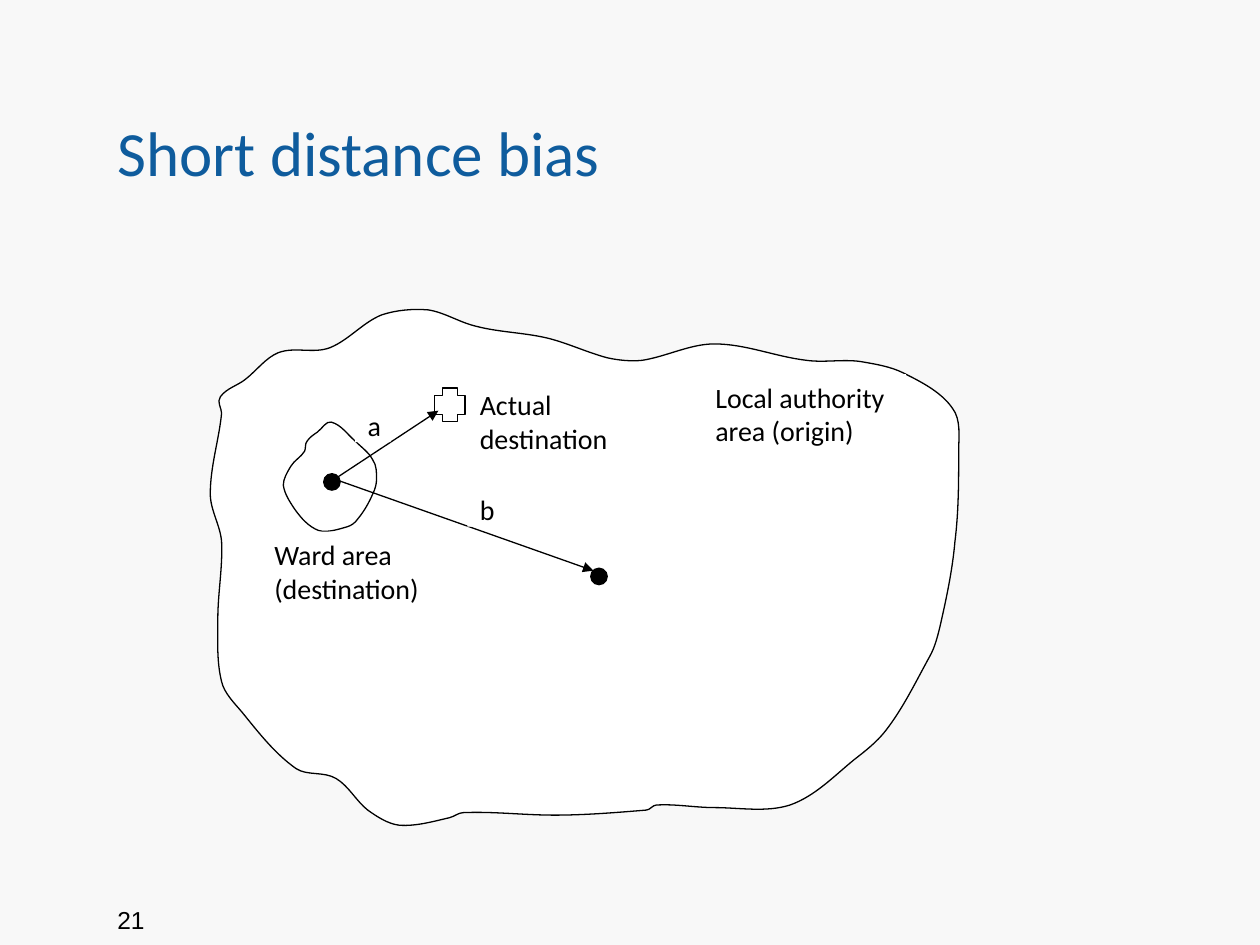
from itertools import chain
from math import dist

from lxml import etree
from pptx import Presentation
from pptx.dml.color import RGBColor
from pptx.enum.shapes import MSO_CONNECTOR, MSO_SHAPE
from pptx.enum.text import MSO_ANCHOR, PP_ALIGN
from pptx.oxml.ns import qn
from pptx.util import Pt

BACKGROUND = RGBColor(0xF8, 0xF8, 0xF8)
BLUE = RGBColor(0x0F, 0x5C, 0x9D)
BLACK = RGBColor(0, 0, 0)
WHITE = RGBColor(0xFF, 0xFF, 0xFF)

# Points the smooth outlines pass through, in hundredths of an inch.
UNIT = Pt(0.72)
AUTHORITY = [
    (19, 82), (10, 146), (19, 184), (16, 245), (19, 295), (35, 319), (78, 364),
    (110, 372), (135, 397), (160, 409), (200, 403), (211, 399), (283, 401),
    (356, 397), (364, 393), (410, 395), (470, 393), (521, 357), (546, 334),
    (581, 275), (589, 252), (601, 184), (604, 112), (599, 78), (560, 50),
    (526, 41), (483, 40), (410, 27), (353, 40), (325, 38), (280, 23), (221, 13),
    (183, 0), (146, 4), (105, 30), (64, 34), (38, 55), (18, 69),
]
WARD = [
    (18, 23), (7, 35), (1, 50), (10, 69), (29, 86), (52, 83), (60, 77), (72, 57),
    (75, 45), (72, 30), (58, 15), (39, 0), (28, 8), (20, 15),
]


def write(tf, text, size=16, font="Calibri", color=BLACK, wrap=True,
          anchor=MSO_ANCHOR.TOP):
    tf.word_wrap = wrap
    tf.vertical_anchor = anchor
    p = tf.paragraphs[0]
    p.alignment = PP_ALIGN.LEFT
    r = p.add_run()
    r.text = text
    r.font.size = Pt(size)
    r.font.name = font
    r.font.color.rgb = color


def paint(sp, fill=WHITE, outlined=True):
    sp.shadow.inherit = False
    sp.fill.solid()
    sp.fill.fore_color.rgb = fill
    if outlined:
        sp.line.color.rgb = BLACK
        sp.line.width = Pt(0.75)
    else:
        sp.line.fill.background()


def smooth_curve(points, i):
    """Return two control points and the end of the curve leaving point i."""
    before, start, end, after = (points[(i + k) % len(points)] for k in (-1, 0, 1, 2))
    reach = dist(start, end) / 3

    def control(point, a, b, sign):
        step = sign * reach / dist(a, b)
        return tuple(p + (q - o) * step for p, o, q in zip(point, a, b))

    return control(start, before, end, 1), control(end, start, after, -1), end


def add_outline(shapes, points, left, top):
    """Draw a closed smooth outline with its points measured from left, top."""
    builder = shapes.build_freeform(*points[0], scale=UNIT)
    curves = (smooth_curve(points, i) for i in range(len(points)))
    builder.add_line_segments(list(chain.from_iterable(curves)), close=True)
    sp = builder.convert_to_shape(Pt(left), Pt(top))
    lines = list(sp._element.iter(qn("a:lnTo")))
    for first, second, end in zip(lines[::3], lines[1::3], lines[2::3]):
        first.tag = qn("a:cubicBezTo")
        for line in (second, end):
            first.append(line[0])
            line.getparent().remove(line)
    paint(sp)


def add_arrow(shapes, x1, y1, x2, y2):
    c = shapes.add_connector(MSO_CONNECTOR.STRAIGHT, Pt(x1), Pt(y1), Pt(x2), Pt(y2))
    c.line.color.rgb = BLACK
    c.line.width = Pt(0.75)
    etree.SubElement(c.line._get_or_add_ln(), qn("a:tailEnd"), type="triangle")
    etree.SubElement(c._element.spPr, qn("a:effectLst"))


def add_title(s, text, left, top, width, height):
    sp = s.shapes.title
    sp.left, sp.top, sp.width, sp.height = Pt(left), Pt(top), Pt(width), Pt(height)
    write(sp.text_frame, text, size=36, color=BLUE, wrap=False,
          anchor=MSO_ANCHOR.BOTTOM)


def add_page_number(s, text, left, top, width, height):
    sp = s.shapes.add_textbox(Pt(left), Pt(top), Pt(width), Pt(height))
    write(sp.text_frame, text, size=14, font="Arial")


def add_map(s, left, top):
    shapes = s.shapes.add_group_shape().shapes

    def place(kind, x, y, width, height):
        return shapes.add_shape(kind, Pt(left + x), Pt(top + y), Pt(width), Pt(height))

    add_outline(shapes, AUTHORITY, left, top)
    add_outline(shapes, WARD, left + 48.2, top + 64.1)
    for x, y in ((224.6, 147.6), (72, 93.6)):
        paint(place(MSO_SHAPE.OVAL, x, y, 9.4, 9.4), fill=BLACK)
    cross = place(MSO_SHAPE.CROSS, 135.4, 44.6, 17.3, 19.4)
    cross.adjustments[0] = 0.25
    paint(cross)
    for x1, y1, x2, y2 in ((78.5, 96.5, 137.5, 57.6), (73.4, 95, 226.1, 149)):
        add_arrow(shapes, left + x1, top + y1, left + x2, top + y2)
    for text, *box in (
        ("Local authority area (origin)", 288.7, 36.7, 115.9, 44.6),
        ("Ward area (destination)", 36.7, 126.7, 100.8, 44.6),
        ("Actual destination", 154.1, 41, 94.3, 58.3),
        ("b", 154.1, 100.8, 25.2, 23),
        ("a", 90, 52.6, 20.2, 23),
    ):
        label = place(MSO_SHAPE.RECTANGLE, *box)
        paint(label, outlined=False)
        write(label.text_frame, text)


def main():
    prs = Presentation()
    prs.slide_width, prs.slide_height = Pt(720), Pt(540)
    s = prs.slides.add_slide(prs.slide_layouts[5])
    s.background.fill.solid()
    s.background.fill.fore_color.rgb = BACKGROUND
    add_page_number(s, "21", 60, 513.4, 499, 37.4)
    add_title(s, "Short distance bias", 60, 21.6, 487.4, 90)
    add_map(s, 113, 177.1)
    prs.save("out.pptx")


if __name__ == "__main__":
    main()
